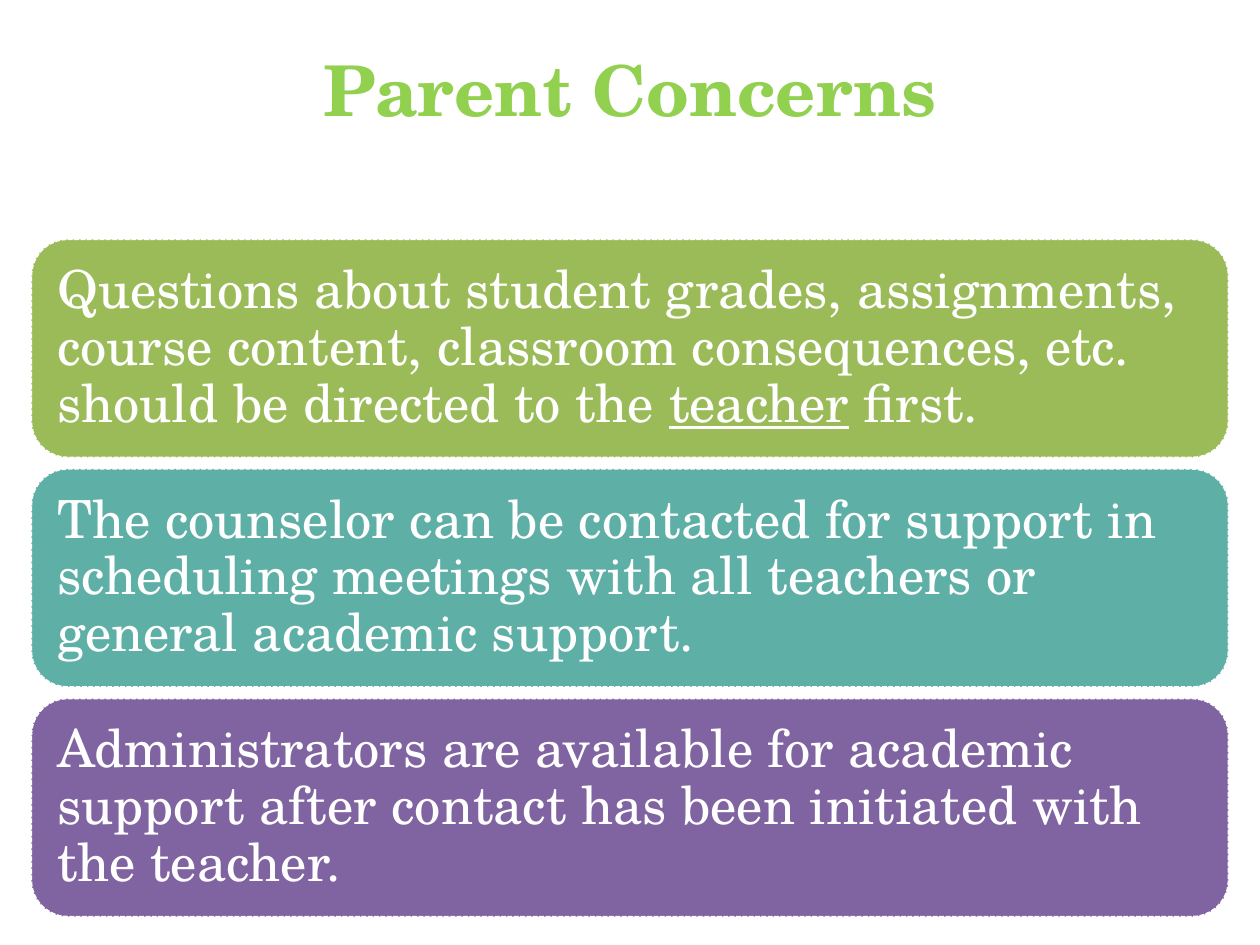
from dataclasses import dataclass

from pptx import Presentation
from pptx.dml.color import RGBColor
from pptx.enum import dml, shapes, text
from pptx.util import Pt


@dataclass(frozen=True)
class Theme:
    font: str = "TeX Gyre Schola"
    head: str = "92D050"
    white: str = "FFFFFF"
    fills: tuple = ("9BBB59", "5EAFA6", "8064A2")
    big: int = 40
    body: int = 30


THEME = Theme()

# Each card is a list of (words, underlined) pieces
CARDS = [
    [("Questions about student grades, assignments, course content, "
      "classroom consequences, etc. should be directed to the ", False),
     ("teacher", True), (" first.", False)],
    [("The counselor can be contacted for support in scheduling meetings "
      "with all teachers or general academic support.", False)],
    [("Administrators are available for academic support after contact "
      "has been initiated with the teacher.", False)],
]
LEFT, TOP, WIDTH, HEIGHT, STEP = 18, 136.8, 684, 124.6, 131.2


def write(frame, parts, size, color, bold=False, align=text.PP_ALIGN.LEFT,
          anchor=text.MSO_ANCHOR.MIDDLE, lead=None):
    frame.word_wrap = True
    frame.vertical_anchor = anchor
    para = frame.paragraphs[0]
    para.alignment = align
    para.line_spacing = lead
    for words, under in parts:
        run = para.add_run()
        run.text = words
        font = run.font
        font.name, font.size, font.bold = THEME.font, Pt(size), bold
        font.underline = under
        font.color.rgb = RGBColor.from_string(color)


def add_title(slide, words):
    box = slide.shapes.add_textbox(Pt(24), Pt(18), Pt(672), Pt(60))
    write(box.text_frame, [(words, False)], THEME.big, THEME.head, bold=True,
          align=text.PP_ALIGN.CENTER, anchor=text.MSO_ANCHOR.BOTTOM)


def add_card(slide, top, parts, fill):
    card = slide.shapes.add_shape(
        shapes.MSO_SHAPE.ROUNDED_RECTANGLE,
        Pt(LEFT), Pt(top), Pt(WIDTH), Pt(HEIGHT))
    card.shadow.inherit = False
    card.fill.solid()
    card.fill.fore_color.rgb = RGBColor.from_string(fill)
    card.line.color.rgb = RGBColor.from_string(THEME.white)
    card.line.width = Pt(0.9)
    card.line.dash_style = dml.MSO_LINE.SQUARE_DOT
    frame = card.text_frame
    frame.margin_left = frame.margin_right = Pt(8.64)
    frame.margin_top = frame.margin_bottom = Pt(8.64)
    write(frame, parts, THEME.body, THEME.white, lead=0.9)


def main():
    deck = Presentation()
    deck.slide_width, deck.slide_height = Pt(720), Pt(540)
    slide = deck.slides.add_slide(deck.slide_layouts[6])

    # Heading
    add_title(slide, "Parent Concerns")

    # Stack of cards
    for row, (parts, fill) in enumerate(zip(CARDS, THEME.fills)):
        add_card(slide, TOP + row * STEP, parts, fill)

    deck.save("out.pptx")


if __name__ == "__main__":
    main()
